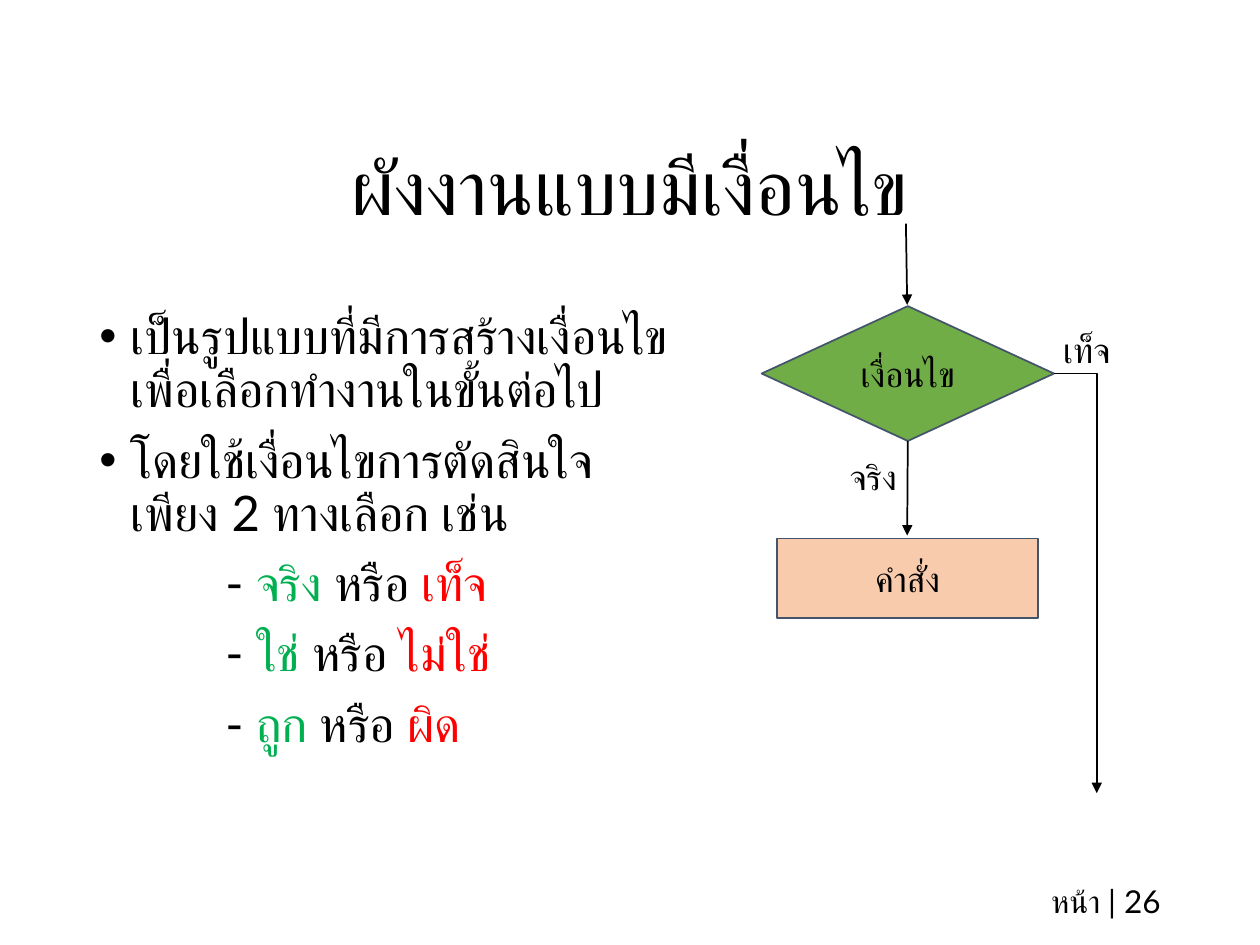
from dataclasses import dataclass

from lxml import etree
from pptx import Presentation
from pptx.dml.color import RGBColor
from pptx.enum.shapes import MSO_CONNECTOR, MSO_SHAPE
from pptx.enum.text import MSO_ANCHOR, MSO_AUTO_SIZE, PP_ALIGN
from pptx.oxml.ns import qn
from pptx.util import Inches, Pt

STRAIGHT, ELBOW = MSO_CONNECTOR.STRAIGHT, MSO_CONNECTOR.ELBOW
DIAMOND, RECTANGLE = MSO_SHAPE.DIAMOND, MSO_SHAPE.RECTANGLE
TOP, MIDDLE = MSO_ANCHOR.TOP, MSO_ANCHOR.MIDDLE
LEFT, CENTER, RIGHT = PP_ALIGN.LEFT, PP_ALIGN.CENTER, PP_ALIGN.RIGHT

COLUMNS, ROWS = 100, 75
CELL = Inches(0.1)
FONT = "Lato"
BLACK, GREEN, RED = "000000", "00B050", "FF0000"
OUTLINE = "44546A"


@dataclass(frozen=True)
class Area:
    column: float
    row: float
    columns: float
    rows: float

    def lengths(self) -> list[int]:
        return [grid(n) for n in (self.column, self.row, self.columns, self.rows)]


@dataclass(frozen=True)
class Label:
    text: str
    area: Area
    size: int = 20
    align: PP_ALIGN = CENTER


@dataclass(frozen=True)
class Step:
    label: Label
    kind: MSO_SHAPE
    fill: str


@dataclass(frozen=True)
class Arrow:
    start: tuple[float, float]
    end: tuple[float, float]
    kind: MSO_CONNECTOR = STRAIGHT


TITLE = Label("ผังงานแบบมีเงื่อนไข", Area(6.9, 7.85, 86.2, 14.5), 44)
BODY_AREA = Area(6.9, 24.3, 47.5, 43.2)
BULLETS = [
    "เป็นรูปแบบที่มีการสร้างเงื่อนไขเพื่อเลือกทำงานในขั้นต่อไป",
    "โดยใช้เงื่อนไขการตัดสินใจเพียง 2 ทางเลือก เช่น",
]
CHOICES = [("จริง", "เท็จ"), ("ใช่", "ไม่ใช่"), ("ถูก", "ผิด")]
LABELS = [
    Label("เท็จ", Area(79.4, 24.8, 13.7, 5.8)),
    Label("จริง", Area(62.45, 34.95, 13.7, 5.8)),
    Label("หน้า | 26", Area(70.6, 69.5, 22.5, 4), 18, RIGHT),
]
STEPS = [
    Step(Label("เงื่อนไข", Area(60.45, 24.3, 23.2, 10.7)), DIAMOND, "70AD47"),
    Step(Label("คำสั่ง", Area(61.65, 42.75, 20.75, 6.3)), RECTANGLE, "F8CBAD"),
]
ARROWS = [
    Arrow((71.9, 17.75), (72, 24.2)),
    Arrow((72.05, 35), (72, 42.5)),
    Arrow((83.65, 29.65), (87.05, 62.95), ELBOW),
]


def grid(count: float) -> int:
    return round(count * CELL)


def color(value: str) -> RGBColor:
    return RGBColor.from_string(value)


def set_font(para, size: int) -> None:
    para.font.name = FONT
    para.font.size = Pt(size)
    para.font.color.rgb = color(BLACK)


def set_frame(box, anchor: MSO_ANCHOR):
    frame = box.text_frame
    frame.word_wrap = True
    frame.auto_size = MSO_AUTO_SIZE.NONE
    frame.vertical_anchor = anchor
    return frame


def write_label(box, label: Label) -> None:
    para = set_frame(box, MIDDLE).paragraphs[0]
    para.text = label.text
    para.alignment = label.align
    set_font(para, label.size)


def add_title(page, label: Label) -> None:
    title = page.shapes.title
    title.left, title.top, title.width, title.height = label.area.lengths()
    write_label(title, label)
    title.text_frame.paragraphs[0].line_spacing = 0.9


def add_bullet(para) -> None:
    properties = para._p.get_or_add_pPr()
    properties.set("marL", str(Inches(0.25)))
    properties.set("indent", str(-Inches(0.25)))
    etree.SubElement(properties, qn("a:buFont")).set("typeface", "Arial")
    etree.SubElement(properties, qn("a:buChar")).set("char", "•")


def add_tab_stop(para) -> None:
    stops = etree.SubElement(para._p.get_or_add_pPr(), qn("a:tabLst"))
    etree.SubElement(stops, qn("a:tab"), pos=str(Inches(1)), algn="l")


def add_body(page) -> None:
    frame = set_frame(page.shapes.add_textbox(*BODY_AREA.lengths()), TOP)
    lines = [[(text, BLACK)] for text in BULLETS]
    lines += [
        [("\t- ", BLACK), (yes, GREEN), (" หรือ ", BLACK), (no, RED)]
        for yes, no in CHOICES
    ]
    for index, spans in enumerate(lines):
        para = frame.add_paragraph() if index else frame.paragraphs[0]
        para.alignment = LEFT
        para.line_spacing = 0.9
        para.space_before = Pt(10 if index else 0)
        if index < len(BULLETS):
            add_bullet(para)
        else:
            add_tab_stop(para)
        set_font(para, 28)
        for text, tint in spans:
            span = para.add_run()
            span.text = text
            span.font.color.rgb = color(tint)


def add_step(page, step: Step) -> None:
    shape = page.shapes.add_shape(step.kind, *step.label.area.lengths())
    shape.shadow.inherit = False
    shape.fill.solid()
    shape.fill.fore_color.rgb = color(step.fill)
    shape.line.color.rgb = color(OUTLINE)
    shape.line.width = Pt(1)
    write_label(shape, step.label)


def add_arrow(page, arrow: Arrow) -> None:
    ends = [grid(n) for n in (*arrow.start, *arrow.end)]
    line = page.shapes.add_connector(arrow.kind, *ends)
    line.line.color.rgb = color(BLACK)
    line.line.width = Pt(1)
    properties = line._element.spPr
    if arrow.kind == ELBOW:
        properties.find(qn("a:prstGeom")).set("prst", "bentConnector2")
    etree.SubElement(properties.find(qn("a:ln")), qn("a:tailEnd")).set("type", "triangle")
    etree.SubElement(properties, qn("a:effectLst"))


def main() -> None:
    deck = Presentation()
    deck.slide_width, deck.slide_height = grid(COLUMNS), grid(ROWS)
    page = deck.slides.add_slide(deck.slide_layouts.get_by_name("Title Only"))
    add_title(page, TITLE)
    add_body(page)
    for step in STEPS:
        add_step(page, step)
    for arrow in ARROWS:
        add_arrow(page, arrow)
    for label in LABELS:
        write_label(page.shapes.add_textbox(*label.area.lengths()), label)
    deck.save("out.pptx")


if __name__ == "__main__":
    main()
